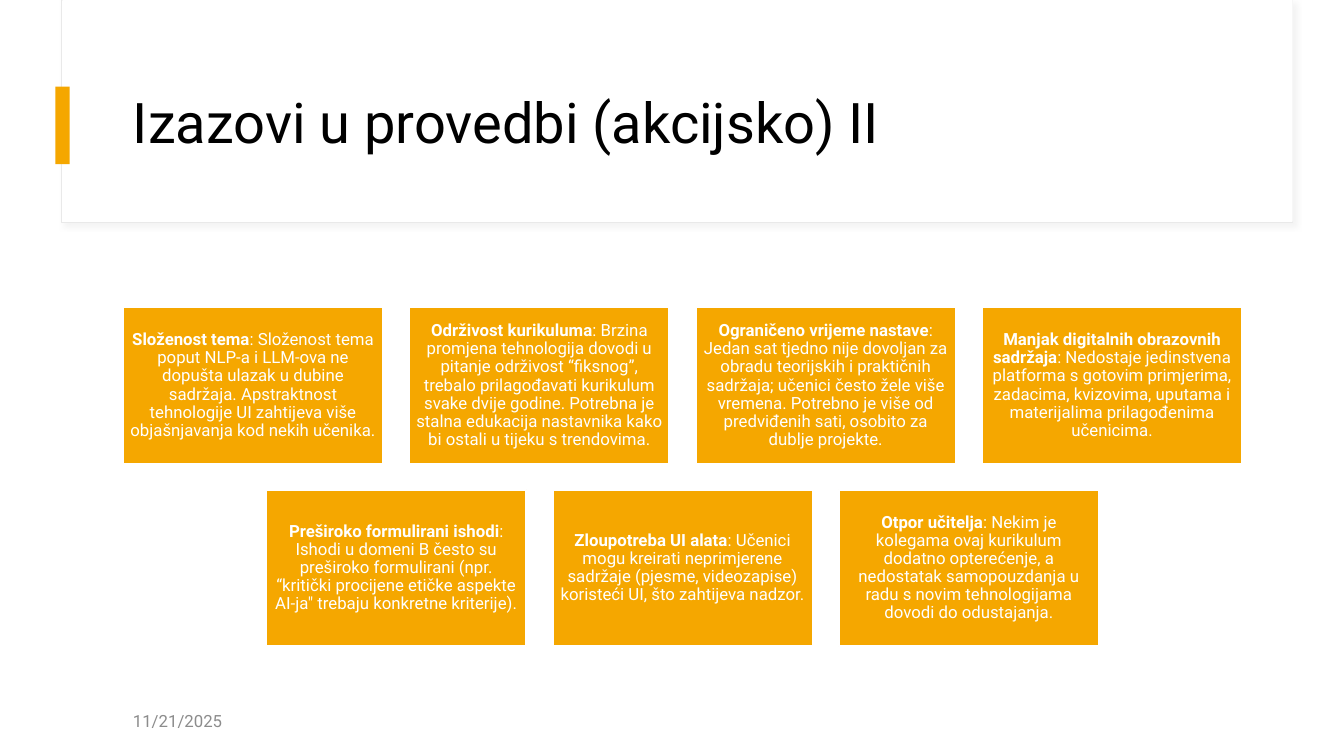
from lxml import etree
from pptx import Presentation
from pptx.dml.color import RGBColor
from pptx.enum import shapes, text
from pptx.oxml import ns
from pptx.util import Inches, Pt

FONT = "Roboto"
AMBER, WHITE = "F5A700", "FFFFFF"


def color(value):
    return RGBColor.from_string(value)


def add_rect(left, top, width, height, fill, line=None, line_width=0.75):
    box = page.shapes.add_shape(shapes.MSO_SHAPE.RECTANGLE, Inches(left), Inches(top),
                                Inches(width), Inches(height))
    box.shadow.inherit = False
    box.fill.solid()
    box.fill.fore_color.rgb = color(fill)
    if line:
        box.line.color.rgb = color(line)
        box.line.width = Pt(line_width)
    else:
        box.line.fill.background()
    return box


deck = Presentation()
deck.slide_width, deck.slide_height = Inches(13.33), Inches(7.5)
page = deck.slides.add_slide(deck.slide_layouts[6])

# Header frame with a soft shadow, and the accent bar
frame = add_rect(0.61, 0, 12.21, 2.21, WHITE, "E9E9E9")
effects = frame.element.spPr.find(ns.qn("a:effectLst"))
shadow = etree.SubElement(effects, ns.qn("a:outerShdw"), blurRad=str(Pt(4)),
                          dist=str(Pt(3)), dir="2700000", algn="tl", rotWithShape="0")
shade = etree.SubElement(shadow, ns.qn("a:srgbClr"), val="D9D9D9")
etree.SubElement(shade, ns.qn("a:alpha"), val="30000")
add_rect(0.62, 0, 12.2, 2.2, WHITE)
add_rect(0.55, 0.86, 0.14, 0.77, AMBER)

# Title and date
labels = [
    ("Izazovi u provedbi (akcijsko) II", 0.6, 11.12, 1.29, 40, "000000"),
    ("11/21/2025", 6.95, 3, 0.4, 12, "8C8C8C"),
]
for words, top, width, height, size, ink in labels:
    box = page.shapes.add_textbox(Inches(1.22), Inches(top), Inches(width), Inches(height))
    box.text_frame.word_wrap = True
    box.text_frame.vertical_anchor = text.MSO_ANCHOR.MIDDLE
    para = box.text_frame.paragraphs[0]
    para.text = words
    para.line_spacing = 0.9 if size == 40 else 1.0
    para.font.name, para.font.size = FONT, Pt(size)
    para.font.color.rgb = color(ink)

# Challenge cards: four above, three below shifted by half a column
CARD_WIDTH, CARD_HEIGHT = 2.58, 1.55
COLUMN_STEP, ROW_STEP = 2.84, 1.81
rows = [
    [
        ("Složenost tema", "Složenost tema poput NLP-a i LLM-ova ne dopušta ulazak u dubine "
         "sadržaja. Apstraktnost tehnologije UI zahtijeva više objašnjavanja kod nekih učenika."),
        ("Održivost kurikuluma", "Brzina promjena tehnologija dovodi u pitanje održivost "
         "“fiksnog”, trebalo prilagođavati kurikulum svake dvije godine. Potrebna je stalna "
         "edukacija nastavnika kako bi ostali u tijeku s trendovima."),
        ("Ograničeno vrijeme nastave", "Jedan sat tjedno nije dovoljan za obradu teorijskih i "
         "praktičnih sadržaja; učenici često žele više vremena. Potrebno je više od "
         "predviđenih sati, osobito za dublje projekte."),
        ("Manjak digitalnih obrazovnih sadržaja", "Nedostaje jedinstvena platforma s gotovim "
         "primjerima, zadacima, kvizovima, uputama i materijalima prilagođenima učenicima."),
    ],
    [
        ("Preširoko formulirani ishodi", "Ishodi u domeni B često su preširoko formulirani "
         "(npr. “kritički procijene etičke aspekte AI-ja\" trebaju konkretne kriterije)."),
        ("Zloupotreba UI alata", "Učenici mogu kreirati neprimjerene sadržaje (pjesme, "
         "videozapise) koristeći UI, što zahtijeva nadzor."),
        ("Otpor učitelja", "Nekim je kolegama ovaj kurikulum dodatno opterećenje, a nedostatak "
         "samopouzdanja u radu s novim tehnologijama dovodi do odustajanja."),
    ],
]
for row, cards in enumerate(rows):
    for column, (heading, detail) in enumerate(cards):
        card = add_rect(1.22 + (column + row / 2) * COLUMN_STEP, 3.05 + row * ROW_STEP,
                        CARD_WIDTH, CARD_HEIGHT, AMBER, WHITE, 1.5)
        body = card.text_frame
        body.word_wrap = True
        body.vertical_anchor = text.MSO_ANCHOR.MIDDLE
        body.margin_left = body.margin_right = Inches(0.05)
        body.margin_top = body.margin_bottom = Inches(0.05)
        para = body.paragraphs[0]
        para.alignment = text.PP_ALIGN.CENTER
        para.line_spacing = 0.9
        para.font.name, para.font.size = FONT, Pt(12)
        para.font.color.rgb = color(WHITE)
        for words, bold in ((heading, True), (": " + detail, False)):
            span = para.add_run()
            span.text = words
            span.font.bold = bold

deck.save("out.pptx")
